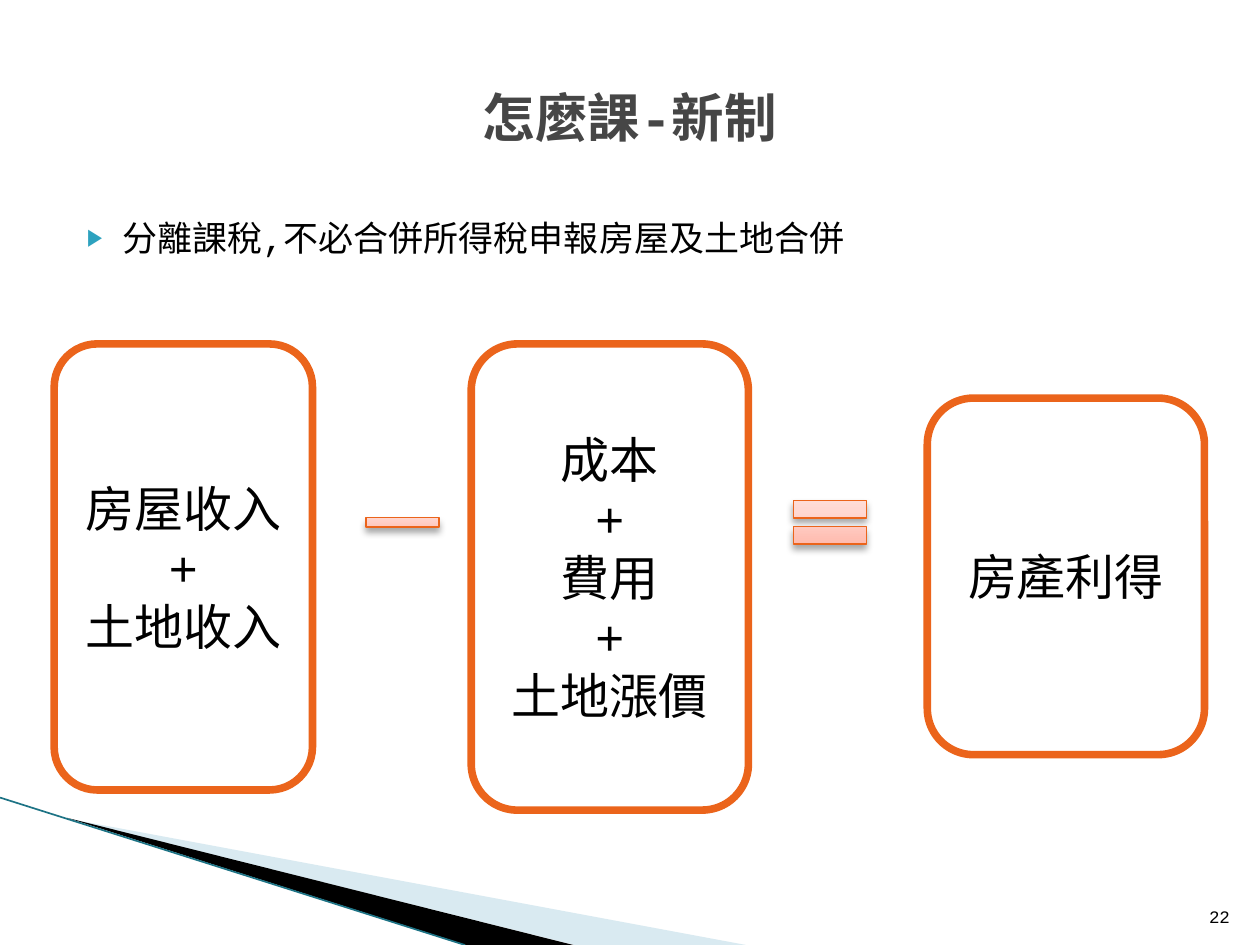
from copy import deepcopy

from lxml import etree
from pptx import Presentation, util as u
from pptx.dml.color import RGBColor
from pptx.enum import shapes, text
from pptx.oxml import ns

COLORS = {
    "black": "000000", "white": "FFFFFF", "title": "464646",
    "orange": "EB641B", "bullet": "2DA2BF", "pale": "A0CBDC",
    "teal": "1D7385",
}
SIGN_GRADIENT = [(0, "FFAC9C"), (0.65, "FFD8D2"), (1, "FFE4DF")]
CENTER, RIGHT = text.PP_ALIGN.CENTER, text.PP_ALIGN.RIGHT
MIDDLE, BOTTOM = text.MSO_ANCHOR.MIDDLE, text.MSO_ANCHOR.BOTTOM
SHAPE = shapes.MSO_SHAPE


def cells(count):
    """Length of grid columns or rows; the slide is 100 by 75."""
    return u.Inches(count / 10)


def color(name):
    return RGBColor.from_string(COLORS[name])


def add_xml(parent, tag, **attributes):
    return etree.SubElement(parent, ns.qn(tag), attributes)


class SlideBuilder:
    font_name = "Courier New"

    def __init__(self, presentation):
        self.slide = presentation.slides.add_slide(presentation.slide_layouts[1])
        self.shapes = self.slide.shapes

    def set_text(self, shape, content, size, ink="black", bold=False,
                 align=None, anchor=None):
        frame = shape.text_frame
        frame.word_wrap = True
        if anchor is not None:
            frame.vertical_anchor = anchor
        frame.text = content
        paragraph = frame.paragraphs[0]
        paragraph.space_before = u.Pt(0)
        if align is not None:
            paragraph.alignment = align
        font_format = {"name": self.font_name, "size": u.Pt(size), "bold": bold}
        for run in paragraph.runs:
            for name, value in font_format.items():
                setattr(run.font, name, value)
            run.font.color.rgb = color(ink)
        return paragraph

    def place(self, shape, box):
        for name, value in zip(("left", "top", "width", "height"), box):
            setattr(shape, name, cells(value))

    def title(self, content, box):
        self.place(self.shapes.title, box)
        self.set_text(self.shapes.title, content, 30, "title", True, CENTER, MIDDLE)

    def bullet(self, content, box):
        body = self.slide.placeholders[1]
        self.place(body, box)
        paragraph = self.set_text(body, content, 20)
        properties = paragraph._p.get_or_add_pPr()
        properties.set("marL", str(u.Inches(0.4)))
        properties.set("indent", str(u.Inches(-0.28)))
        bullet_color = add_xml(properties, "a:buClr")
        add_xml(bullet_color, "a:srgbClr", val=COLORS["bullet"])
        add_xml(properties, "a:buSzPct", val="68000")
        add_xml(properties, "a:buFont", typeface="Arial")
        add_xml(properties, "a:buChar", char="▶")

    def preset(self, kind, box, line_width):
        shape = self.shapes.add_shape(kind, *map(cells, box))
        shape.shadow.inherit = False
        shape.line.color.rgb = color("orange")
        shape.line.width = u.Pt(line_width)
        return shape

    def card(self, lines, box):
        shape = self.preset(SHAPE.ROUNDED_RECTANGLE, box, 4.33)
        shape.fill.solid()
        shape.fill.fore_color.rgb = color("white")
        self.set_text(shape, "\v".join(lines), 28, align=CENTER, anchor=MIDDLE)

    def sign(self, kind, box):
        """Math sign with an upward gradient and a soft shadow below."""
        shape = self.preset(kind, box, 0.75)
        shape.fill.gradient()
        shape.fill.gradient_angle = 90
        properties = shape._element.spPr
        stop_list = properties.find(".//" + ns.qn("a:gsLst"))
        stop_list.append(deepcopy(stop_list[0]))
        for stop, (position, tint) in zip(shape.fill.gradient_stops, SIGN_GRADIENT):
            stop.position = position
            stop.color.rgb = RGBColor.from_string(tint)
        effects = properties.find(ns.qn("a:effectLst"))
        shadow = add_xml(effects, "a:outerShdw", blurRad=str(u.Pt(4)),
                         dist=str(u.Pt(3)), dir="5400000", rotWithShape="0")
        shade = add_xml(shadow, "a:srgbClr", val=COLORS["black"])
        add_xml(shade, "a:alpha", val="35000")

    def wedge(self, points, fill, opacity=100):
        start, *others = [(cells(x), cells(y)) for x, y in points]
        builder = self.shapes.build_freeform(*start)
        builder.add_line_segments(others, close=True)
        shape = builder.convert_to_shape()
        shape.shadow.inherit = False
        shape.fill.solid()
        shape.fill.fore_color.rgb = color(fill)
        shape.line.fill.background()
        if opacity < 100:
            tint = shape._element.spPr.find(
                ns.qn("a:solidFill") + "/" + ns.qn("a:srgbClr"))
            add_xml(tint, "a:alpha", val=str(opacity * 1000))

    def line(self, start, end, ink, width):
        connector = self.shapes.add_connector(
            shapes.MSO_CONNECTOR.STRAIGHT, *map(cells, start + end))
        connector.line.color.rgb = color(ink)
        connector.line.width = u.Pt(width)
        add_xml(connector._element.spPr, "a:effectLst")

    def page_number(self, content, box):
        shape = self.shapes.add_textbox(*map(cells, box))
        self.set_text(shape, content, 10, align=RIGHT, anchor=BOTTOM)


def main():
    presentation = Presentation()
    presentation.slide_width, presentation.slide_height = cells(100), cells(75)
    page = SlideBuilder(presentation)

    page.wedge([(5.5, 65), (59.2, 75), (45.6, 75)], "pale", 40)
    page.wedge([(5.3, 64.9), (45.5, 75), (37, 75)], "black")
    page.line((0, 63.3), (36.9, 75), "teal", 0.95)

    page.title("怎麼課-新制", (5, 3, 90, 12.5))
    page.bullet("分離課稅,不必合併所得稅申報房屋及土地合併", (4.7, 16.7, 90, 49.5))

    page.card(["房屋收入", "+", "土地收入"], (4.3, 27.3, 20.5, 35.4))
    page.sign(SHAPE.MATH_MINUS, (28, 39.9, 7.9, 3.1))
    page.card(["成本", "+", "費用", "+", "土地漲價"], (37.4, 27.3, 22, 37))
    page.sign(SHAPE.MATH_EQUAL, (61.9, 38.5, 7.9, 5.9))
    page.card(["房產利得"], (73.6, 31.6, 22, 28.3))
    page.page_number("22", (94.6, 70.1, 4, 4))

    presentation.save("out.pptx")


if __name__ == "__main__":
    main()
